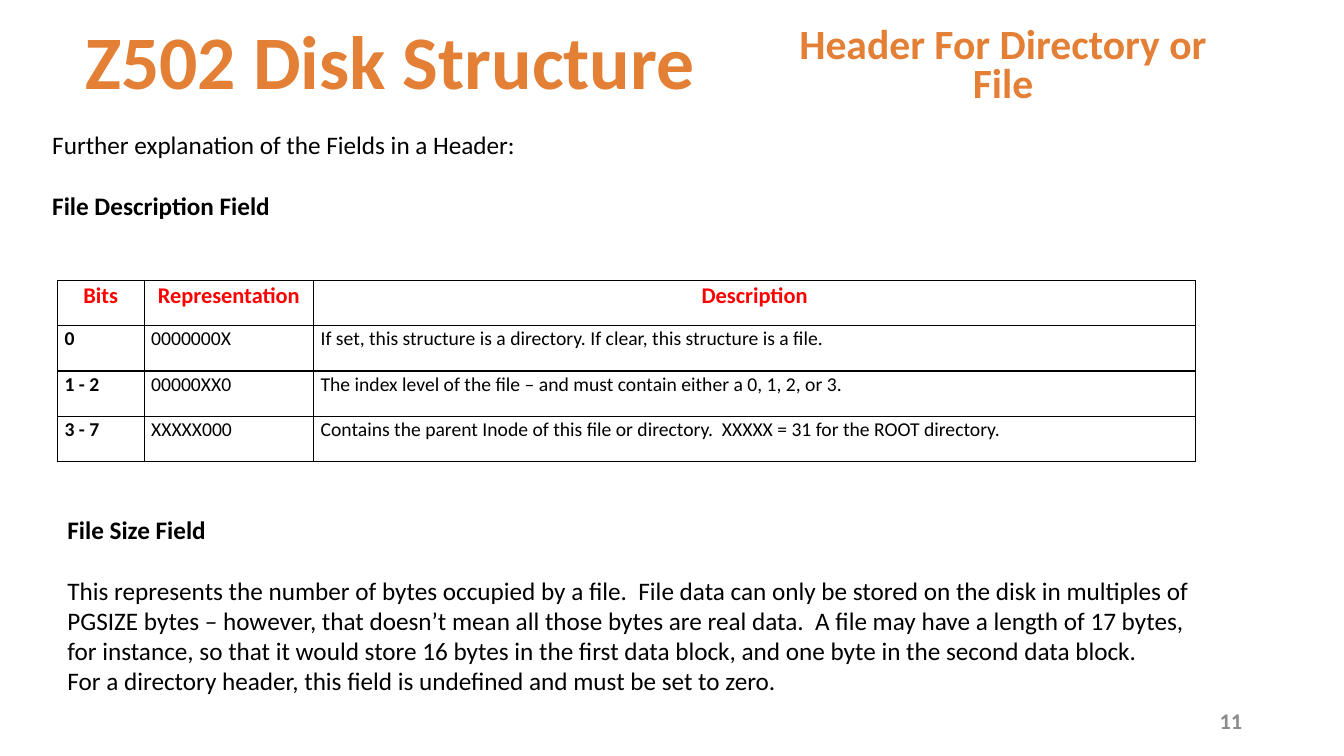
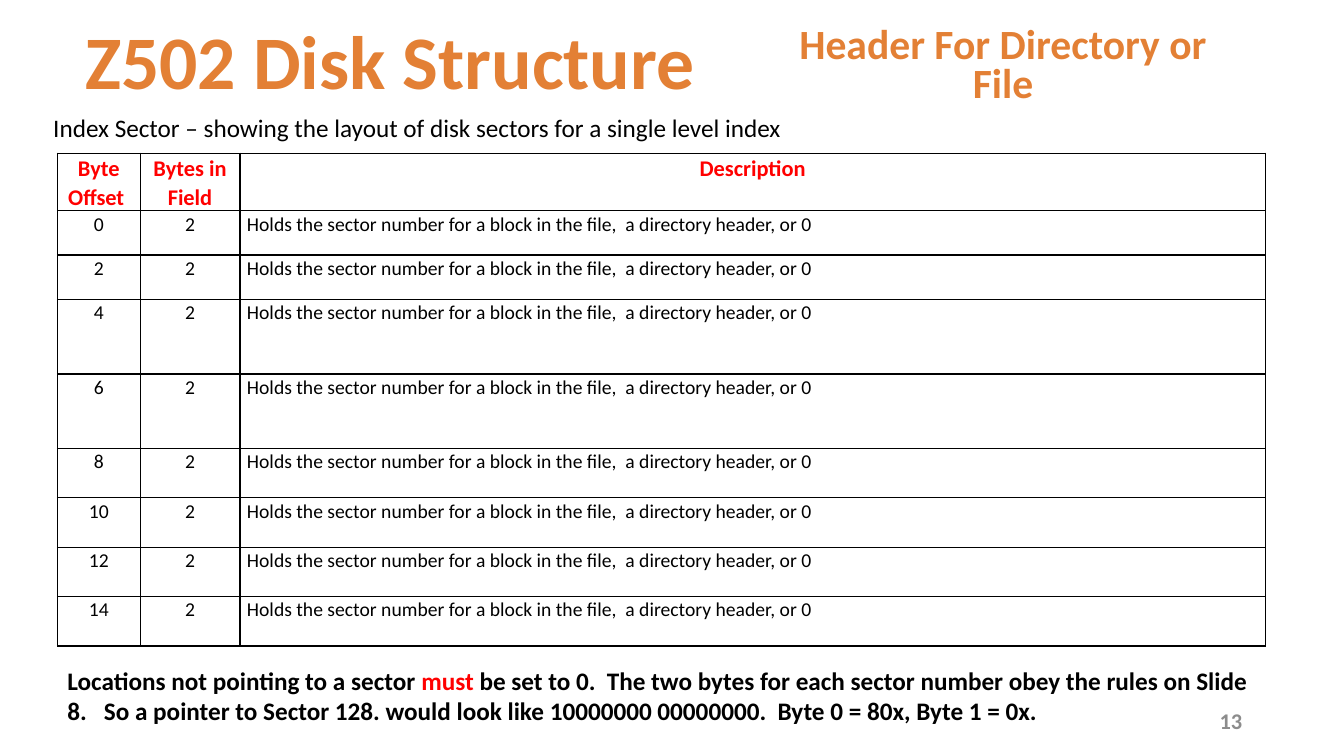
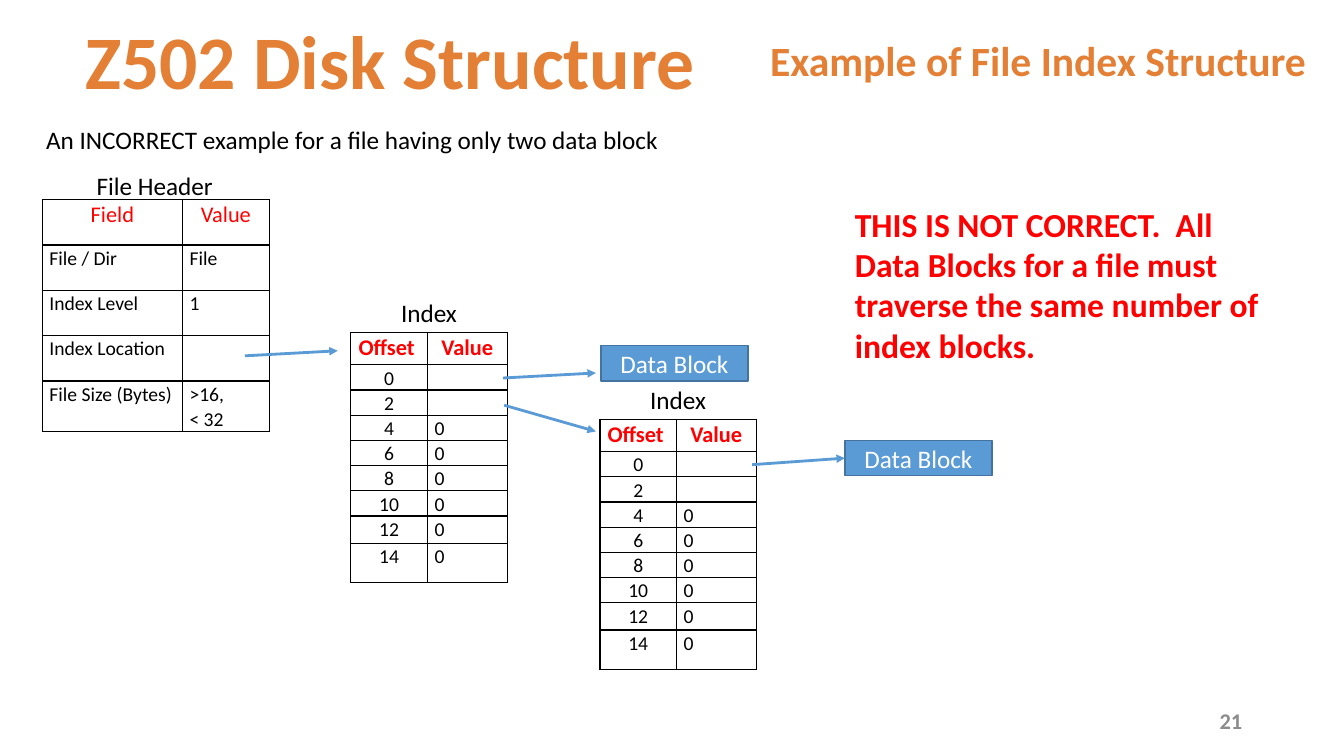
from lxml import etree
from pptx import Presentation
from pptx.dml.color import RGBColor
from pptx.enum import shapes, text
from pptx.oxml import ns
from pptx.util import Inches, Pt

FONT = "Calibri"
ORANGE = RGBColor(0xE3, 0x80, 0x35)
GRAY = RGBColor(0x8C, 0x8C, 0x8C)
BLACK = RGBColor(0, 0, 0)
RED = RGBColor(0xFF, 0, 0)
WHITE = RGBColor(0xFF, 0xFF, 0xFF)
BLUE = RGBColor(0x5B, 0x9B, 0xD5)
DARK_BLUE = RGBColor(0x43, 0x73, 0x9E)
LEFT, CENTER, RIGHT = text.PP_ALIGN.LEFT, text.PP_ALIGN.CENTER, text.PP_ALIGN.RIGHT
TOP, MIDDLE, BOTTOM = (
    text.MSO_ANCHOR.TOP, text.MSO_ANCHOR.MIDDLE, text.MSO_ANCHOR.BOTTOM)


def style(para, size=18, color=BLACK, bold=False, align=LEFT, spacing=1.0):
    para.alignment = align
    para.line_spacing = spacing
    for span in para.runs:
        span.font.name = FONT
        span.font.size = Pt(size)
        span.font.bold = bold
        span.font.color.rgb = color


def add_text(page, box, words, anchor=TOP, wrap=True, **look):
    frame = page.shapes.add_textbox(*map(Inches, box)).text_frame
    frame.word_wrap = wrap
    frame.vertical_anchor = anchor
    frame.text = words
    for para in frame.paragraphs:
        style(para, **look)
    return frame


def add_page(deck, subtitle, subtitle_box, number):
    page = deck.slides.add_slide(deck.slide_layouts[5])
    title = page.shapes.title
    title.left, title.top, title.width, title.height = map(
        Inches, (0.57, 0.18, 6.6, 0.92))
    frame = title.text_frame
    frame.text = "Z502 Disk Structure"
    frame.auto_size = text.MSO_AUTO_SIZE.NONE
    frame.vertical_anchor = BOTTOM
    style(frame.paragraphs[0], 54, ORANGE, True, CENTER, 0.9)
    add_text(page, subtitle_box, subtitle, BOTTOM, size=29.7, color=ORANGE,
             bold=True, align=CENTER, spacing=0.8)
    add_text(page, (9.42, 6.95, 3, 0.4), number, MIDDLE, size=16, color=GRAY,
             bold=True, align=RIGHT)
    return page


def add_borders(cell):
    props = cell._tc.get_or_add_tcPr()
    for side in ("a:lnL", "a:lnR", "a:lnT", "a:lnB"):
        line = etree.SubElement(props, ns.qn(side), w=str(Pt(1)))
        fill = etree.SubElement(line, ns.qn("a:solidFill"))
        etree.SubElement(fill, ns.qn("a:srgbClr"), val=str(BLACK))


def add_grid(page, left, top, widths, heights, rows, centered=(),
             bold_header=True, bold_columns=()):
    table = page.shapes.add_table(
        len(rows), len(widths), Inches(left), Inches(top),
        Inches(sum(widths)), Inches(sum(heights))).table
    table.first_row = table.horz_banding = False
    for column, width in zip(table.columns, widths):
        column.width = Inches(width)
    for r, (height, row) in enumerate(zip(heights, rows)):
        table.rows[r].height = Inches(height)
        for c, words in enumerate(row):
            cell = table.cell(r, c)
            cell.margin_left = cell.margin_right = Inches(0.07)
            cell.margin_top = cell.margin_bottom = 0
            add_borders(cell)
            cell.fill.solid()
            cell.fill.fore_color.rgb = WHITE
            cell.text_frame.text = words
            align = CENTER if r == 0 or c in centered else LEFT
            for para in cell.text_frame.paragraphs:
                if r == 0:
                    style(para, 16, RED, bold_header, align, 1.07)
                else:
                    style(para, 14, BLACK, c in bold_columns, align, 1.07)
                if not words:
                    etree.SubElement(para._p, ns.qn("a:endParaRPr"), sz="1400")


def add_index(page, left, top):
    rows = [("Offset ", "Value")]
    rows += [(str(offset), "" if offset < 4 else "0") for offset in range(0, 16, 2)]
    add_grid(page, left, top, (0.76, 0.79), [0.32] + [0.25] * 6 + [0.27, 0.39],
             rows, centered=(0,))
    add_text(page, (left + 0.4, top - 0.4, 0.76, 0.4), "Index", wrap=False)


def add_file_header(page, left, top):
    rows = [("Field", "Value"), ("File / Dir", "File"), ("Index Level", "1"),
            ("Index Location", ""), ("File Size (Bytes)", ">16,\n< 32")]
    add_grid(page, left, top, (1.39, 0.86), [0.45] * 5, rows, bold_header=False)
    add_text(page, (left + 0.44, top - 0.34, 1.37, 0.4), "File Header", wrap=False)


def add_data_block(page, left, top):
    block = page.shapes.add_shape(
        shapes.MSO_SHAPE.RECTANGLE, *map(Inches, (left, top, 1.46, 0.35)))
    block.shadow.inherit = False
    block.fill.solid()
    block.fill.fore_color.rgb = BLUE
    block.line.color.rgb = DARK_BLUE
    block.line.width = Pt(1)
    block.text_frame.text = "Data Block"
    block.text_frame.vertical_anchor = MIDDLE
    style(block.text_frame.paragraphs[0], color=WHITE, align=CENTER)
    return block


def add_arrow(page, start, end):
    arrow = page.shapes.add_connector(
        shapes.MSO_CONNECTOR.STRAIGHT, *map(Inches, start + end))
    arrow.line.color.rgb = BLUE
    arrow.line.width = Pt(2)
    etree.SubElement(arrow.line._get_or_add_ln(), ns.qn("a:tailEnd"), type="triangle")
    etree.SubElement(arrow._element.spPr, ns.qn("a:effectLst"))
    return arrow


def build_header_fields(deck):
    page = add_page(deck, "Header For Directory or File", (7.53, 0.29, 4.84, 0.82), "11")
    intro = add_text(page, (0.42, 1.23, 12.66, 1.31),
                     "Further explanation of the Fields in a Header:\n"
                     "File Description Field")
    sizes = add_text(
        page, (0.57, 5.05, 11.49, 1.92),
        "File Size Field\n"
        "This represents the number of bytes occupied by a file.  File data can only be "
        "stored on the disk in multiples of PGSIZE bytes – however, that doesn’t mean all "
        "those bytes are real data.  A file may have a length of 17 bytes, for instance, "
        "so that it would store 16 bytes in the first data block, and one byte in the "
        "second data block.\n"
        "For a directory header, this field is undefined and must be set to zero.")
    for frame, heading in ((intro, 1), (sizes, 0)):
        style(frame.paragraphs[heading], bold=True)
        frame.paragraphs[1].space_before = Pt(22)
    rows = [
        ("Bits", "Representation", "Description"),
        ("0", "0000000X",
         "If set, this structure is a directory. If clear, this structure is a file."),
        ("1 - 2", "00000XX0",
         "The index level of the file – and must contain either a 0, 1, 2, or 3."),
        ("3 - 7", "XXXXX000",
         "Contains the parent Inode of this file or directory.  XXXXX = 31 for the "
         "ROOT directory."),
    ]
    add_grid(page, 0.57, 2.78, (0.86, 1.68, 8.75), [0.45] * 4, rows, bold_columns=(0,))


def build_index_sector(deck):
    page = add_page(deck, "Header For Directory or File", (7.53, 0.29, 4.84, 0.82), "13")
    add_text(page, (0.43, 1.07, 12.66, 0.4),
             "Index Sector – showing the layout of disk sectors for a single level index")
    rows = [("Byte Offset ", "Bytes in Field", "Description")]
    rows += [(str(offset), "2",
              "Holds the sector number for a block in the file,  a directory header, or 0")
             for offset in range(0, 16, 2)]
    heights = [0.56] + [0.44] * 2 + [0.74] * 2 + [0.49] * 4
    add_grid(page, 0.57, 1.52, (0.82, 0.99, 10.17), heights, rows, centered=(0, 1))
    para = add_text(page, (0.57, 6.55, 12.12, 0.71), "").paragraphs[0]
    for words in (
            "Locations not pointing to a sector ", "must",
            " be set to 0.  The two bytes for each sector number obey the rules on "
            "Slide 8.   So a pointer to Sector 128. would look like 10000000 00000000.  "
            "Byte 0 = 80x, Byte 1 = 0x."):
        para.add_run().text = words
    style(para, bold=True)
    para.runs[1].font.color.rgb = RED


def build_index_example(deck):
    page = add_page(deck, "Example of File Index Structure", (7.53, 0.07, 5.54, 0.82), "21")
    add_text(page, (0.36, 1.18, 12.66, 0.4),
             "An INCORRECT example for a file having only two data block")
    add_file_header(page, 0.42, 1.98)
    add_index(page, 3.48, 3.3)
    add_index(page, 5.95, 4.16)
    add_data_block(page, 5.96, 3.43)
    last_block = add_data_block(page, 8.38, 4.37)
    add_arrow(page, (2.43, 3.53), (3.35, 3.48))
    add_arrow(page, (4.99, 3.75), (5.91, 3.7))
    add_arrow(page, (5, 4.02), (5.91, 4.28))
    add_arrow(page, (7.46, 4.61), (8.38, 4.55)).end_connect(last_block, 1)
    add_text(page, (8.38, 1.97, 4.31, 1.72),
             "THIS IS NOT CORRECT.  All Data Blocks for a file must traverse the same "
             "number of index blocks.", size=24, color=RED, bold=True)


def main():
    deck = Presentation()
    deck.slide_width, deck.slide_height = Inches(13.33), Inches(7.5)
    build_header_fields(deck)
    build_index_sector(deck)
    build_index_example(deck)
    deck.save("out.pptx")


if __name__ == "__main__":
    main()
